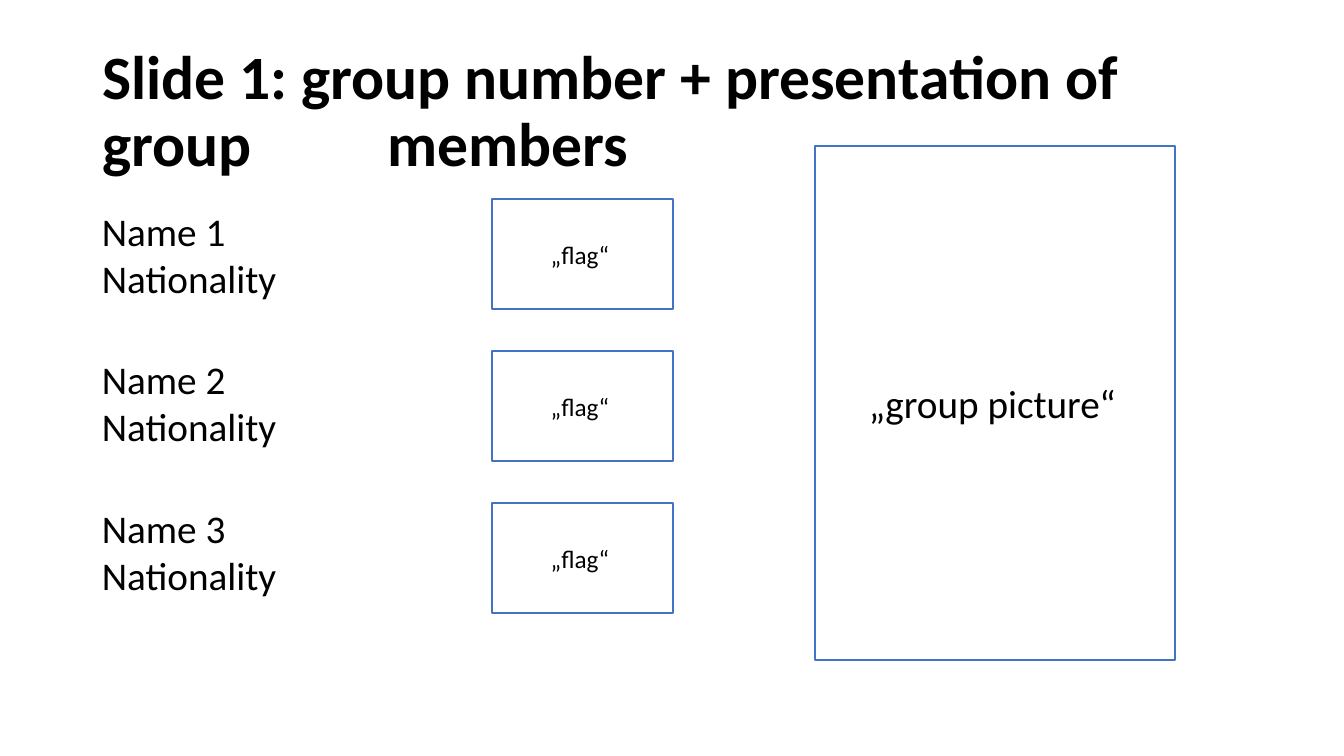
import pptx
import pptx.util
import pptx.dml.color
import pptx.enum.shapes
import pptx.enum.text
import lxml.etree

COLORS = {"text": "000000", "frame": "4472C4"}
FONT = "Calibri"
MEMBERS = 3


def px(n):
    return pptx.util.Emu(round(n * 914400 / 100.8))


def rgb(name):
    return pptx.dml.color.RGBColor.from_string(COLORS[name])


def format_paragraph(p, size, align, bold=False):
    p.font.name = FONT
    p.font.size = pptx.util.Pt(size)
    p.font.bold = bold
    p.font.color.rgb = rgb("text")
    p.alignment = align


def add_title(s, x, y, w, h):
    sp = s.shapes.title
    sp.left, sp.top, sp.width, sp.height = px(x), px(y), px(w), px(h)
    tf = sp.text_frame
    tf.word_wrap = True
    tf.auto_size = pptx.enum.text.MSO_AUTO_SIZE.NONE
    tf.vertical_anchor = pptx.enum.text.MSO_ANCHOR.MIDDLE
    p = tf.paragraphs[0]
    p.text = "Slide 1: group number + presentation of group\tmembers"
    format_paragraph(p, 44, pptx.enum.text.PP_ALIGN.LEFT, bold=True)
    p.line_spacing = 0.9
    ns = "{http://schemas.openxmlformats.org/drawingml/2006/main}"
    tabs = lxml.etree.SubElement(p._p.get_or_add_pPr(), ns + "tabLst")
    lxml.etree.SubElement(tabs, ns + "tab", pos=str(px(285)), algn="l")


def add_names(s, x, y, w, h):
    tf = s.shapes.add_textbox(px(x), px(y), px(w), px(h)).text_frame
    tf.word_wrap = True
    for i in range(MEMBERS):
        name = tf.add_paragraph() if i else tf.paragraphs[0]
        name.text = f"Name {i + 1}"
        name.space_before = pptx.util.Pt(39 if i else 0)
        nationality = tf.add_paragraph()
        nationality.text = "Nationality"
        for p in (name, nationality):
            format_paragraph(p, 28, pptx.enum.text.PP_ALIGN.LEFT)


def add_frame(s, x, y, w, h, label, size):
    sp = s.shapes.add_shape(pptx.enum.shapes.MSO_SHAPE.RECTANGLE,
                            px(x), px(y), px(w), px(h))
    sp.shadow.inherit = False
    sp.fill.background()
    sp.line.color.rgb = rgb("frame")
    sp.line.width = pptx.util.Pt(1)
    tf = sp.text_frame
    tf.margin_left, tf.margin_right = px(10), px(15)
    tf.vertical_anchor = pptx.enum.text.MSO_ANCHOR.MIDDLE
    p = tf.paragraphs[0]
    p.text = label
    format_paragraph(p, size, pptx.enum.text.PP_ALIGN.CENTER)


def add_flags(s, x, y, w, h):
    flag_h = 110
    pitch = (h - flag_h) / (MEMBERS - 1)
    for i in range(MEMBERS):
        add_frame(s, x, y + i * pitch, w, flag_h, "„flag“", 18)


def main():
    prs = pptx.Presentation()
    prs.slide_width, prs.slide_height = px(1344), px(756)
    s = prs.slides.add_slide(prs.slide_layouts[5])
    add_title(s, 92, 40, 1159, 146)
    add_names(s, 92, 202, 390, 480)
    add_flags(s, 492, 199, 181, 414)
    add_frame(s, 815, 146, 360, 514, "„group picture“", 28)
    prs.save("out.pptx")


if __name__ == "__main__":
    main()
